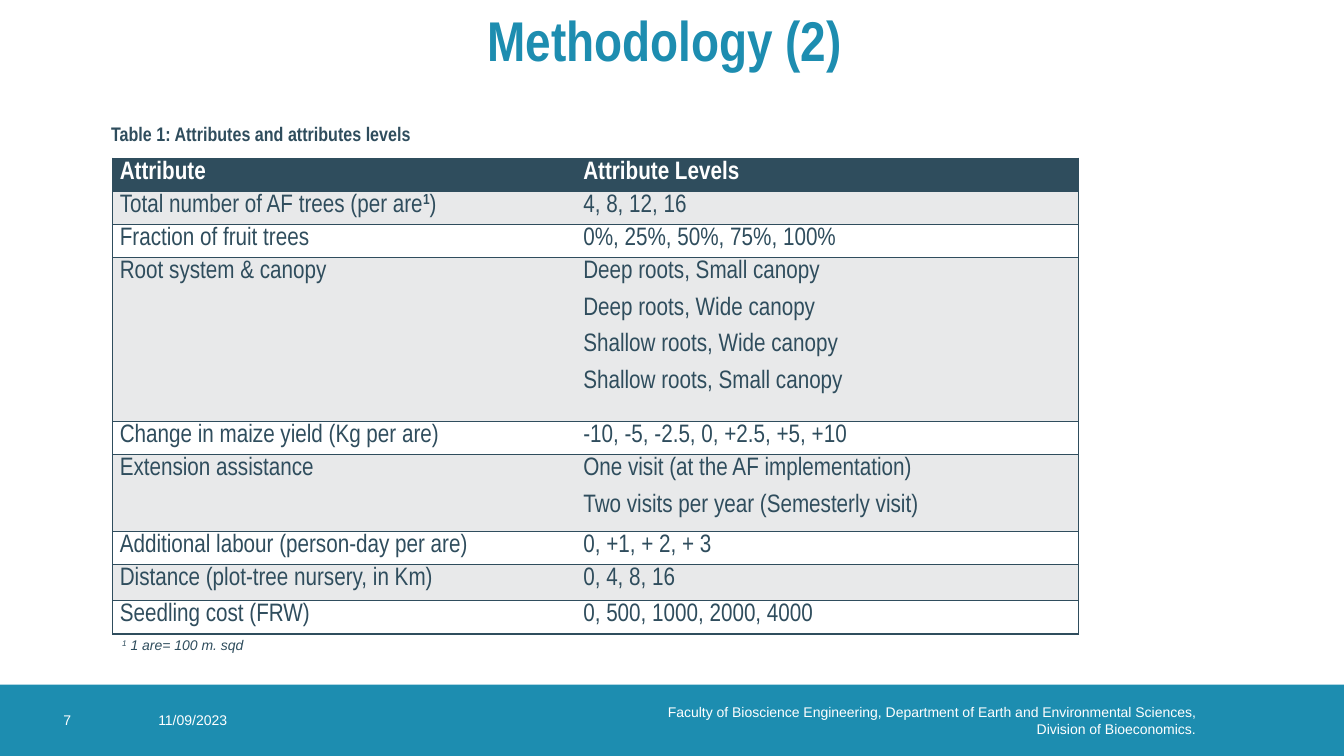
from lxml.etree import SubElement
from pptx import Presentation
from pptx.dml.color import RGBColor
from pptx.enum.shapes import MSO_SHAPE as Shape
from pptx.enum.text import MSO_ANCHOR as Anchor, MSO_AUTO_SIZE as AutoSize, PP_ALIGN as Align
from pptx.oxml.ns import qn
from pptx.util import Cm, Pt

BLUE = RGBColor(0x1D, 0x8D, 0xB0)
SLATE = RGBColor(0x2F, 0x4D, 0x5D)
GREY = RGBColor(0xE8, 0xE9, 0xEA)
WHITE = RGBColor(0xFF, 0xFF, 0xFF)
NARROW = "Arial Narrow"
NO_GRID_STYLE = "{2D5ABB26-0587-4C30-8999-92F81FD0307C}"

FOOTER_TOP, FOOTER_HEIGHT = 17.25, 1.8
# left, width, text, alignment, right inset
FOOTER_ITEMS = [
    (1.6, 1.8, "7", Align.LEFT, 0),
    (3.99, 2.0, "11/09/2023", Align.LEFT, 0),
    (16.77, 13.87, "Faculty of Bioscience Engineering, Department of Earth and "
     "Environmental Sciences, Division of Bioeconomics.", Align.RIGHT, 0.51),
]

COLUMN_WIDTHS = [11.68, 12.65]
# row height, attribute, levels; ^ encloses superscript text
ATTRIBUTE_ROWS = [
    (0.64, "Attribute", ["Attribute Levels"]),
    (0.8, "Total number of AF trees (per are^1^)", ["4, 8, 12, 16"]),
    (0.83, "Fraction of fruit trees", ["0%, 25%, 50%, 75%, 100%"]),
    (3.66, "Root system & canopy", [
        "Deep roots, Small canopy", "Deep roots, Wide canopy",
        "Shallow roots, Wide canopy", "Shallow roots, Small canopy"]),
    (0.81, "Change in maize yield (Kg per are)", ["-10, -5, -2.5, 0, +2.5, +5, +10"]),
    (1.63, "Extension assistance", [
        "One visit (at the AF implementation)", "Two visits per year (Semesterly visit)"]),
    (0.81, "Additional labour (person-day per are)", ["0, +1, + 2, + 3"]),
    (0.91, "Distance (plot-tree nursery, in Km)", ["0, 4, 8, 16"]),
    (0.64, "Seedling cost (FRW)", ["0, 500, 1000, 2000, 4000"]),
]


def format_font(font, name, size, color, bold=False, italic=False):
    font.name, font.size = name, Pt(size)
    font.color.rgb = color
    font.bold, font.italic = bold, italic


def set_insets(text_frame, left=0, top=0, right=0, bottom=0):
    text_frame.margin_left, text_frame.margin_top = Cm(left), Cm(top)
    text_frame.margin_right, text_frame.margin_bottom = Cm(right), Cm(bottom)


def write_marked_text(paragraph, text, bold_superscript=False, **style):
    """Write text whose parts between ^ marks are superscript."""
    paragraph.line_spacing, paragraph.space_after = 1.07, Pt(8)
    format_font(paragraph.font, **style)
    for index, part in enumerate(text.split("^")):
        if not part:
            continue
        run = paragraph.add_run()
        run.text = part
        format_font(run.font, **style)
        if index % 2:
            run.font.bold = bold_superscript
            run._r.get_or_add_rPr().set("baseline", "30000")
    # The paragraph mark takes the same font, so that it does not stretch the line.
    mark = SubElement(paragraph._p, qn("a:endParaRPr"), sz=str(style["size"] * 100))
    SubElement(mark, qn("a:latin"), typeface=style["name"])


def add_text_box(slide, left, top, width, height):
    text_frame = slide.shapes.add_textbox(Cm(left), Cm(top), Cm(width), Cm(height)).text_frame
    text_frame.word_wrap = True
    return text_frame


def add_title(slide, text):
    title = slide.shapes.title
    title.left, title.top, title.width, title.height = Cm(10.41), Cm(0.08), Cm(13), Cm(1.8)
    text_frame = title.text_frame
    text_frame.text = text
    text_frame.auto_size = AutoSize.NONE
    text_frame.vertical_anchor = Anchor.MIDDLE
    set_insets(text_frame)
    paragraph = text_frame.paragraphs[0]
    paragraph.alignment = Align.CENTER
    format_font(paragraph.runs[0].font, NARROW, 40, BLUE, bold=True)


def add_footer(slide, slide_width):
    band = slide.shapes.add_shape(
        Shape.RECTANGLE, 0, Cm(FOOTER_TOP), slide_width, Cm(FOOTER_HEIGHT))
    band.shadow.inherit = False
    band.fill.solid()
    band.fill.fore_color.rgb = BLUE
    band.line.fill.background()
    for left, width, text, alignment, right_inset in FOOTER_ITEMS:
        text_frame = add_text_box(slide, left, FOOTER_TOP, width, FOOTER_HEIGHT)
        text_frame.text = text
        text_frame.vertical_anchor = Anchor.MIDDLE
        set_insets(text_frame, right=right_inset)
        paragraph = text_frame.paragraphs[0]
        paragraph.alignment = alignment
        format_font(paragraph.runs[0].font, "Arial", 10, WHITE)


def add_borders(cell, sides):
    """Draw thin lines on the given sides, listed in the order L, R, T, B."""
    properties = cell._tc.get_or_add_tcPr()
    for index, side in enumerate(sides):
        line = SubElement(properties, qn(f"a:ln{side}"), w=str(Pt(1)))
        fill = SubElement(line, qn("a:solidFill"))
        SubElement(fill, qn("a:srgbClr"), val=str(SLATE))
        properties.insert(index, line)


def fill_cell(cell, lines, fill, style, sides):
    cell.fill.solid()
    cell.fill.fore_color.rgb = fill
    add_borders(cell, sides)
    set_insets(cell, left=0.18, top=0.02, right=0.18)
    text_frame = cell.text_frame
    for index, line in enumerate(lines):
        paragraph = text_frame.add_paragraph() if index else text_frame.paragraphs[0]
        write_marked_text(paragraph, line, bold_superscript=True, **style)


def add_attribute_table(slide):
    heights = [height for height, _, _ in ATTRIBUTE_ROWS]
    table = slide.shapes.add_table(
        len(heights), len(COLUMN_WIDTHS), Cm(2.84), Cm(3.99),
        Cm(sum(COLUMN_WIDTHS)), Cm(sum(heights))).table
    table.horz_banding = False
    table._tbl.tblPr.find(qn("a:tableStyleId")).text = NO_GRID_STYLE
    for column, width in zip(table.columns, COLUMN_WIDTHS):
        column.width = Cm(width)
    for index, (height, attribute, levels) in enumerate(ATTRIBUTE_ROWS):
        table.rows[index].height = Cm(height)
        header = index == 0
        fill = SLATE if header else GREY if index % 2 else WHITE
        style = dict(name=NARROW, size=18, color=WHITE if header else SLATE, bold=header)
        fill_cell(table.cell(index, 0), [attribute], fill, style, "LTB")
        fill_cell(table.cell(index, 1), levels, fill, style, "RTB")


def add_caption(slide, text):
    text_frame = add_text_box(slide, 2.55, 3.02, 14.76, 0.79)
    text_frame.text = text
    paragraph = text_frame.paragraphs[0]
    paragraph.line_spacing = 0.9
    format_font(paragraph.runs[0].font, NARROW, 14, SLATE, bold=True)


def add_footnote(slide, text):
    text_frame = add_text_box(slide, 2.83, 15.88, 16.69, 0.69)
    text_frame.auto_size = AutoSize.SHAPE_TO_FIT_TEXT
    write_marked_text(text_frame.paragraphs[0], text,
                      name="Arial", size=10, color=SLATE, italic=True)


def main():
    presentation = Presentation()
    presentation.slide_width, presentation.slide_height = Cm(33.87), Cm(19.05)
    slide = presentation.slides.add_slide(presentation.slide_layouts[5])
    add_footer(slide, presentation.slide_width)
    add_title(slide, "Methodology (2) ")
    add_caption(slide, "Table 1: Attributes and attributes levels")
    add_attribute_table(slide)
    add_footnote(slide, "^1^ 1 are= 100 m. sqd")
    presentation.save("out.pptx")


if __name__ == "__main__":
    main()
